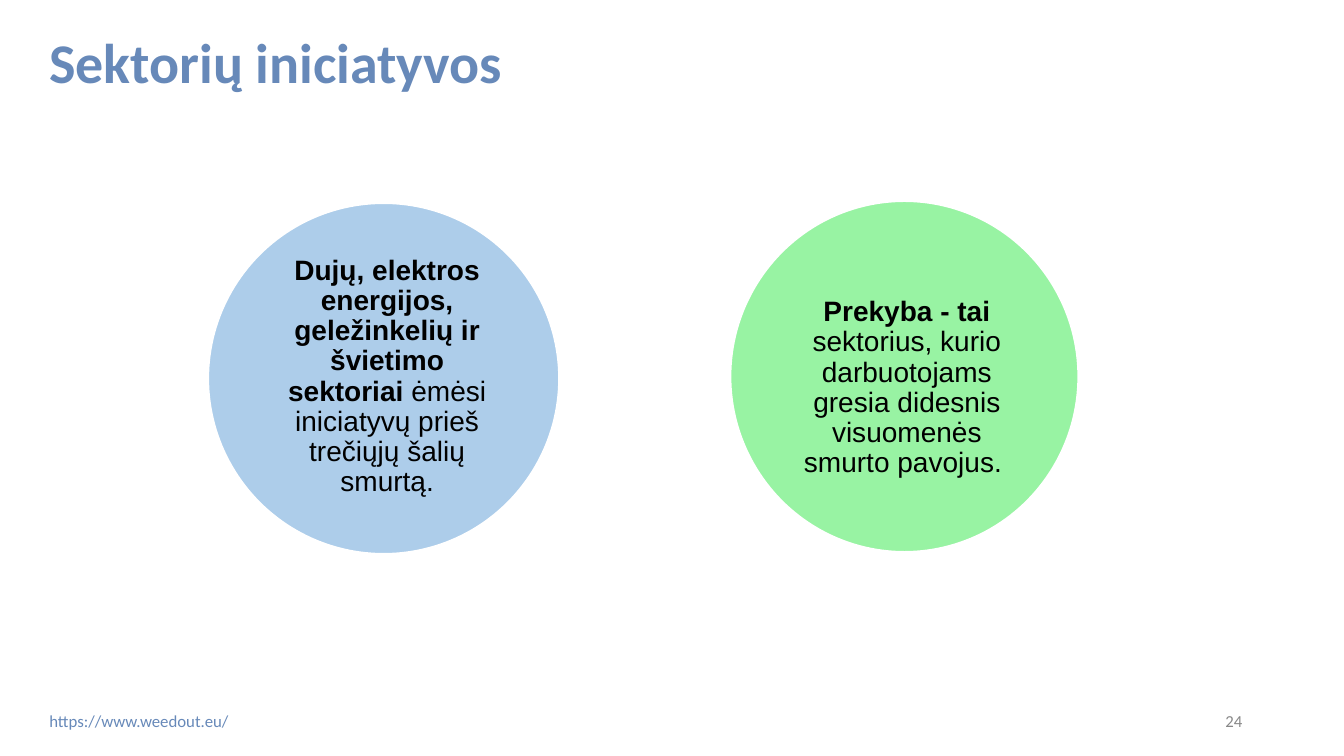
from dataclasses import dataclass

from lxml.etree import SubElement
from pptx import Presentation
from pptx.dml.color import RGBColor
from pptx.enum.shapes import MSO_SHAPE as Shape
from pptx.enum.text import MSO_ANCHOR as Anchor, MSO_AUTO_SIZE as Fit, PP_ALIGN as Align
from pptx.oxml.ns import qn
from pptx.slide import Slide
from pptx.text.text import TextFrame
from pptx.util import Inches, Pt

STEEL = RGBColor(0x67, 0x89, 0xB9)
GREEN = RGBColor(0x2E, 0xE8, 0x44)
BLUE = RGBColor(0x59, 0x99, 0xD5)
GRAY = RGBColor(0x88, 0x88, 0x88)
BLACK = RGBColor(0, 0, 0)
WHITE = RGBColor(255, 255, 255)

Box = tuple[float, float, float, float]


@dataclass
class Disc:
    box: Box
    label: Box
    color: RGBColor
    lead: str
    rest: str


@dataclass
class Note:
    box: Box
    text: str
    color: RGBColor
    align: Align
    anchor: Anchor


DISCS = [
    Disc((7.24, 1.99, 3.46, 3.49), (7.96, 2.89, 2.07, 1.92), GREEN,
         "Prekyba - tai ",
         "sektorius, kurio darbuotojams gresia didesnis visuomenės smurto pavojus. "),
    Disc((2.06, 2.01, 3.49, 3.49), (2.79, 2.78, 2.1, 1.92), BLUE,
         "Dujų, elektros energijos, geležinkelių ir švietimo sektoriai",
         " ėmėsi iniciatyvų prieš trečiųjų šalių smurtą."),
]
NOTES = [
    Note((9.42, 6.95, 3, 0.4), "24", GRAY, Align.RIGHT, Anchor.MIDDLE),
    Note((0.39, 7, 2.99, 0.3), "https://www.weedout.eu/", STEEL, Align.LEFT, Anchor.TOP),
]


def add_text(slide: Slide, box: Box, anchor: Anchor) -> TextFrame:
    frame = slide.shapes.add_textbox(*map(Inches, box)).text_frame
    frame.word_wrap = True
    frame.vertical_anchor = anchor
    return frame


def style(para, face: str, size: float, color: RGBColor, align: Align) -> None:
    para.alignment = align
    para.font.name = face
    para.font.size = Pt(size)
    para.font.color.rgb = color


def draw_title(slide: Slide, text: str) -> None:
    title = slide.shapes.title
    title.left, title.top, title.width, title.height = map(Inches, (0.39, 0.3, 11.1, 0.67))
    frame = title.text_frame
    frame.text = text
    frame.auto_size = Fit.NONE
    frame.vertical_anchor = Anchor.TOP
    para = frame.paragraphs[0]
    style(para, "Calibri", 40, STEEL, Align.LEFT)
    para.font.bold = True
    para.line_spacing = 0.9


def draw_disc(slide: Slide, disc: Disc) -> None:
    oval = slide.shapes.add_shape(Shape.OVAL, *map(Inches, disc.box))
    oval.shadow.inherit = False
    oval.fill.solid()
    oval.fill.fore_color.rgb = disc.color
    # Fill opacity
    tint = oval.fill._xPr.find(qn("a:solidFill"))[0]
    SubElement(tint, qn("a:alpha")).set("val", "49000")
    oval.line.color.rgb = WHITE
    oval.line.width = Pt(2)

    # Label inside the disc
    frame = add_text(slide, disc.label, Anchor.MIDDLE)
    frame.margin_left = frame.margin_right = frame.margin_top = frame.margin_bottom = 0
    para = frame.paragraphs[0]
    style(para, "Arial", 20, BLACK, Align.CENTER)
    para.line_spacing = 0.9
    for text, bold in ((disc.lead, True), (disc.rest, False)):
        run = para.add_run()
        run.text = text
        run.font.bold = bold


def draw_note(slide: Slide, note: Note) -> None:
    frame = add_text(slide, note.box, note.anchor)
    frame.text = note.text
    style(frame.paragraphs[0], "Calibri", 12, note.color, note.align)


def main() -> None:
    deck = Presentation()
    deck.slide_width, deck.slide_height = Inches(13.33), Inches(7.5)
    slide = deck.slides.add_slide(deck.slide_layouts[5])

    draw_title(slide, "Sektorių iniciatyvos")
    for disc in DISCS:
        draw_disc(slide, disc)
    # Footer
    for note in NOTES:
        draw_note(slide, note)

    deck.save("out.pptx")


if __name__ == "__main__":
    main()
